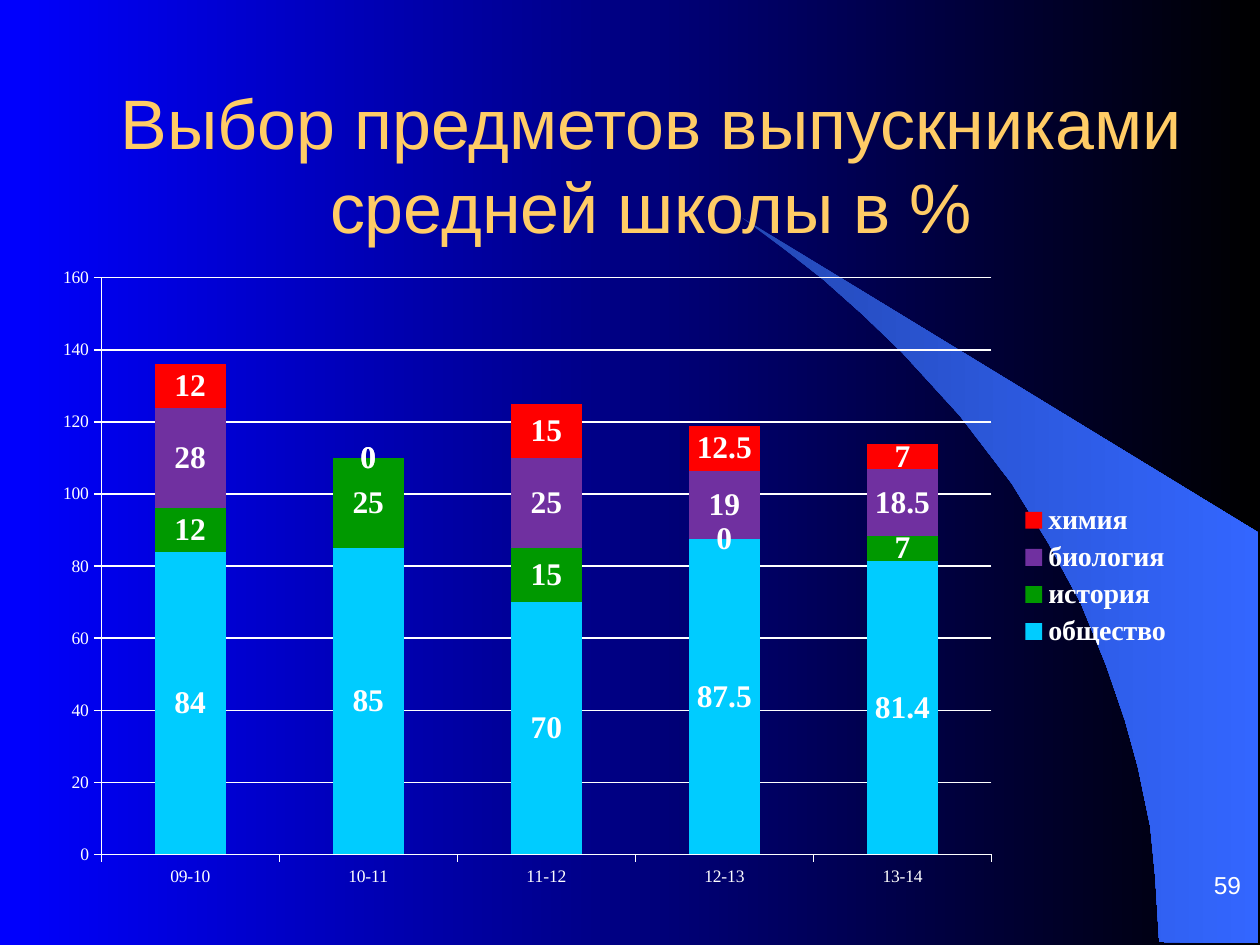
from collections import namedtuple
from dataclasses import dataclass

from lxml import etree
from pptx import Presentation
from pptx.chart.data import CategoryChartData
from pptx.dml.color import RGBColor
from pptx.enum.chart import XL_CHART_TYPE, XL_LEGEND_POSITION, XL_TICK_MARK
from pptx.enum.text import MSO_ANCHOR, PP_ALIGN
from pptx.oxml.ns import qn
from pptx.util import Cm, Pt

STACKED = XL_CHART_TYPE.COLUMN_STACKED
LEGEND_RIGHT = XL_LEGEND_POSITION.RIGHT
TICK_OUT = XL_TICK_MARK.OUTSIDE
CENTER, RIGHT = PP_ALIGN.CENTER, PP_ALIGN.RIGHT
MIDDLE, BOTTOM = MSO_ANCHOR.MIDDLE, MSO_ANCHOR.BOTTOM
TITLE_ONLY = 5

Box = namedtuple("Box", "left top width height")


@dataclass(frozen=True)
class Theme:
    background: tuple = ("0000FF", "000000")
    swoosh: tuple = ("2449B6", "3366FF")
    title: str = "FFCC66"
    text: str = "FFFFFF"
    heading_font: str = "Arial"
    chart_font: str = "Times New Roman"
    title_size: int = 40
    number_size: int = 14
    axis_size: int = 10
    legend_size: int = 16
    label_size: int = 18


THEME = Theme()

YEARS = ("09-10", "10-11", "11-12", "12-13", "13-14")
SUBJECTS = (
    ("общество", "00CCFF", (84, 85, 70, 87.5, 81.4)),
    ("история", "009900", (12, 25, 15, 0, 7)),
    ("биология", "7030A0", (28, 0, 25, 19, 18.5)),
    ("химия", "FF0000", (12, 0, 15, 12.5, 7)),
)

# Outline of the swoosh in cm from the corner of its box
SWOOSH_OUTLINE = (
    (8.41, 14.6), (10.41, 14.63), (10.41, 6.35), (0, 0), (0.89, 0.66),
    (1.63, 1.24), (2.44, 1.96), (3.23, 2.72), (4.39, 3.99), (5.44, 5.36),
    (6.17, 6.55), (6.83, 7.77), (7.34, 9.02), (7.72, 10.13), (7.98, 11.07),
    (8.23, 12.27), (8.33, 13.28),
)


def rgb(color):
    return RGBColor.from_string(color)


def place(shape, box):
    shape.left, shape.top, shape.width, shape.height = map(Cm, box)


def fill_gradient(fill, colors):
    fill.gradient()
    fill.gradient_angle = 0
    for stop, color in zip(fill.gradient_stops, colors):
        stop.color.rgb = rgb(color)


def style_font(font, name, size, color, bold=False):
    font.name, font.size, font.bold = name, Pt(size), bold
    font.color.rgb = rgb(color)


def write_text(frame, text, size, color, align, anchor):
    frame.text = text
    frame.word_wrap = True
    frame.vertical_anchor = anchor
    para = frame.paragraphs[0]
    para.alignment = align
    style_font(para.runs[0].font, THEME.heading_font, size, color)


def add_swoosh(page, box):
    points = [(Cm(box.left + x), Cm(box.top + y)) for x, y in SWOOSH_OUTLINE]
    builder = page.shapes.build_freeform(*points[0])
    builder.add_line_segments(points[1:], close=True)
    swoosh = builder.convert_to_shape()
    swoosh.shadow.inherit = False
    fill_gradient(swoosh.fill, THEME.swoosh)
    swoosh.line.fill.background()


def add_page_number(page, box, number):
    frame = page.shapes.add_textbox(*map(Cm, box)).text_frame
    frame.margin_top = frame.margin_bottom = 0
    write_text(frame, number, THEME.number_size, THEME.text, RIGHT, BOTTOM)


def set_title(page, box, text):
    title = page.shapes.title
    place(title, box)
    write_text(title.text_frame, text, THEME.title_size, THEME.title, CENTER, MIDDLE)
    title.element.getparent().append(title.element)  # in front of the swoosh


def fix_plot_area(chart, box):
    """Pin the inner plot area to a box in fractions of the chart."""
    area = chart.element.find(".//" + qn("c:plotArea"))
    for old in area.findall(qn("c:layout")):
        area.remove(old)
    layout = etree.Element(qn("c:layout"))
    manual = etree.SubElement(layout, qn("c:manualLayout"))
    settings = (("layoutTarget", "inner"), ("xMode", "edge"), ("yMode", "edge"),
                *zip("xywh", box))
    for name, value in settings:
        etree.SubElement(manual, qn("c:" + name)).set("val", str(value))
    area.insert(0, layout)


def style_axis(axis):
    axis.major_tick_mark = TICK_OUT
    axis.format.line.color.rgb = rgb(THEME.text)
    axis.format.line.width = Pt(0.75)
    style_font(axis.tick_labels.font, THEME.chart_font, THEME.axis_size, THEME.text)


def add_subject_chart(page, box):
    data = CategoryChartData()
    data.categories = YEARS
    for name, _, values in SUBJECTS:
        data.add_series(name, values)
    chart = page.shapes.add_chart(STACKED, *map(Cm, box), data).chart
    chart.has_title = False
    style_font(chart.font, THEME.chart_font, THEME.axis_size, THEME.text)

    plot = chart.plots[0]
    plot.gap_width, plot.overlap = 150, 100
    plot.vary_by_categories = False
    for series, (_, color, _) in zip(plot.series, SUBJECTS):
        series.format.fill.solid()
        series.format.fill.fore_color.rgb = rgb(color)
        labels = series.data_labels
        labels.show_value = True
        style_font(labels.font, THEME.chart_font, THEME.label_size, THEME.text, True)

    style_axis(chart.category_axis)
    value_axis = chart.value_axis
    style_axis(value_axis)
    value_axis.minimum_scale, value_axis.maximum_scale = 0, 160
    value_axis.major_unit = 20
    grid = value_axis.major_gridlines.format.line
    grid.color.rgb, grid.width = rgb(THEME.text), Pt(0.75)

    chart.has_legend = True
    legend = chart.legend
    legend.position = LEGEND_RIGHT
    legend.include_in_layout = False
    style_font(legend.font, THEME.chart_font, THEME.legend_size, THEME.text, True)
    fix_plot_area(chart, Box(0.05, 0.04, 0.78, 0.89))


def main():
    deck = Presentation()
    deck.slide_width, deck.slide_height = Cm(25.4), Cm(19.05)
    page = deck.slides.add_slide(deck.slide_layouts[TITLE_ONLY])
    fill_gradient(page.background.fill, THEME.background)
    add_swoosh(page, Box(14.96, 4.39, 10.41, 14.63))
    add_page_number(page, Box(19.99, 17.07, 5.28, 1.07), "59")
    set_title(page, Box(1.9, 1.7, 22.45, 3.18),
              "Выбор предметов выпускниками средней школы в %")
    add_subject_chart(page, Box(0.89, 5.08, 23.01, 13.06))
    deck.save("out.pptx")


if __name__ == "__main__":
    main()
